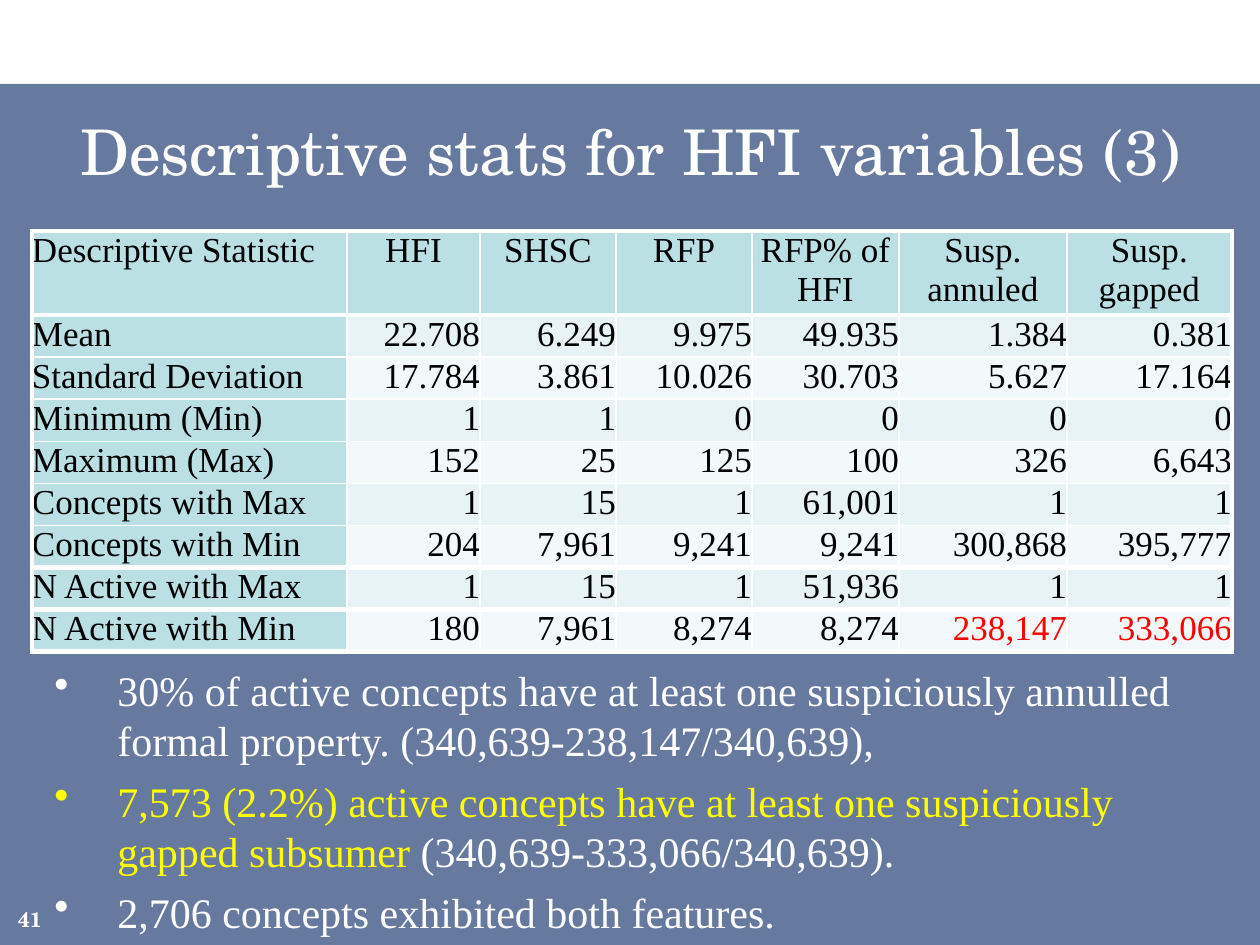
from lxml import etree
from pptx import Presentation
from pptx import util as u
from pptx.dml import color
from pptx.enum import shapes, text
from pptx.oxml import ns

PX = 914400 / 126
SERIF, HEADING = "Times New Roman", "TeX Gyre Schola"
COLORS = {
    "white": "FFFFFF", "black": "000000", "navy": "002060", "yellow": "FFFF00",
    "red": "FF0000", "header": "BBE0E3", "odd": "E7F3F4", "even": "F3F9FA",
}
COLUMN_WIDTHS = [315, 133, 136, 136, 147, 168, 165]
HEADER_HEIGHT, ROW_HEIGHT = 84, 42
THICK_RULES = {0, 1, 7, 8, 9}
STATISTICS = [
    ["Descriptive Statistic", "HFI", "SHSC", "RFP", "RFP% of\nHFI", "Susp. annuled", "Susp. gapped"],
    ["Mean", "22.708", "6.249", "9.975", "49.935", "1.384", "0.381"],
    ["Standard Deviation", "17.784", "3.861", "10.026", "30.703", "5.627", "17.164"],
    ["Minimum (Min)", "1", "1", "0", "0", "0", "0"],
    ["Maximum (Max)", "152", "25", "125", "100", "326", "6,643"],
    ["Concepts with Max", "1", "15", "1", "61,001", "1", "1"],
    ["Concepts with Min", "204", "7,961", "9,241", "9,241", "300,868", "395,777"],
    ["N Active with Max", "1", "15", "1", "51,936", "1", "1"],
    ["N Active with Min", "180", "7,961", "8,274", "8,274", "238,147", "333,066"],
]
HIGHLIGHTS = {"238,147", "333,066"}
FINDINGS = [
    [("30% of active concepts have at least one suspiciously annulled "
      "formal property. (340,639-238,147/340,639),", "white")],
    [("7,573 (2.2%) active concepts have at least one suspiciously gapped subsumer ", "yellow"),
     ("(340,639-333,066/340,639).", "white")],
    [("2,706 concepts exhibited both features.", "white")],
]


def px(length):
    """Turn pixels into EMU."""
    return u.Emu(round(length * PX))


def rgb(name):
    """Look up a named colour."""
    return color.RGBColor.from_string(COLORS[name])


def style(font, face, size, shade):
    """Set the face, size and colour of a font."""
    font.name, font.size = face, u.Pt(size)
    font.color.rgb = rgb(shade)


def place(shape, box):
    """Move and size a shape to a pixel box."""
    shape.left, shape.top, shape.width, shape.height = map(px, box)


def add_panel(page, box):
    """Put the translucent panel behind the title."""
    panel = page.shapes.add_shape(shapes.MSO_SHAPE.RECTANGLE, *map(px, box))
    panel.shadow.inherit = False
    panel.fill.solid()
    panel.fill.fore_color.rgb = rgb("navy")
    panel.line.fill.background()
    shade = panel.element.spPr.find(".//" + ns.qn("a:srgbClr"))
    etree.SubElement(shade, ns.qn("a:alpha"), val="60000")
    page.shapes.title.element.addprevious(panel.element)


def add_title(page, box):
    """Fill and place the title placeholder."""
    title = page.shapes.title
    place(title, box)
    frame = title.text_frame
    frame.text = "Descriptive stats for HFI variables (3)"
    frame.vertical_anchor = text.MSO_ANCHOR.MIDDLE
    para = frame.paragraphs[0]
    para.alignment = text.PP_ALIGN.CENTER
    style(para.runs[0].font, HEADING, 36, "white")


def set_borders(cell, widths):
    """Draw white cell borders, given point widths by side tag."""
    properties = cell._tc.get_or_add_tcPr()
    for position, (side, width) in enumerate(widths.items()):
        line = etree.Element(ns.qn(f"a:{side}"), w=str(u.Pt(width)))
        fill = etree.SubElement(line, ns.qn("a:solidFill"))
        etree.SubElement(fill, ns.qn("a:srgbClr"), val=COLORS["white"])
        properties.insert(position, line)


def fill_cell(cell, value, row, column):
    """Write one statistic and format its cell by position."""
    cell.margin_left = cell.margin_right = cell.margin_top = cell.margin_bottom = 0
    cell.fill.solid()
    is_header = row == 0 or column == 0
    cell.fill.fore_color.rgb = rgb("header" if is_header else "odd" if row % 2 else "even")
    cell.text_frame.text = value
    align = text.PP_ALIGN.LEFT if column == 0 else text.PP_ALIGN.RIGHT if row else text.PP_ALIGN.CENTER
    for para in cell.text_frame.paragraphs:
        para.alignment = align
        style(para.runs[0].font, SERIF, 20, "red" if value in HIGHLIGHTS else "black")
    set_borders(cell, {
        "lnL": 3 if column == 0 else 1,
        "lnR": 3 if column == len(COLUMN_WIDTHS) - 1 else 1,
        "lnT": 3 if row in THICK_RULES else 1,
        "lnB": 3 if row + 1 in THICK_RULES else 1,
    })


def add_statistics(page, left, top):
    """Add the table of statistics."""
    heights = [HEADER_HEIGHT] + [ROW_HEIGHT] * (len(STATISTICS) - 1)
    box = (left, top, sum(COLUMN_WIDTHS), sum(heights))
    table = page.shapes.add_table(len(heights), len(COLUMN_WIDTHS), *map(px, box)).table
    for column, width in zip(table.columns, COLUMN_WIDTHS):
        column.width = px(width)
    for row, height in zip(table.rows, heights):
        row.height = px(height)
    for row, values in enumerate(STATISTICS):
        for column, value in enumerate(values):
            fill_cell(table.cell(row, column), value, row, column)


def add_findings(page, box):
    """Add the bulleted findings."""
    frame = page.shapes.add_textbox(*map(px, box)).text_frame
    frame.word_wrap = True
    for index, spans in enumerate(FINDINGS):
        para = frame.add_paragraph() if index else frame.paragraphs[0]
        properties = para._p.get_or_add_pPr()
        properties.set("marL", str(px(63)))
        properties.set("indent", str(px(-63)))
        etree.SubElement(properties, ns.qn("a:buChar"), char="•")
        para.space_before = u.Pt(3 if index else 0)
        para.space_after = u.Pt(3)
        for words, shade in spans:
            span = para.add_run()
            span.text = words
            style(span.font, SERIF, 24, shade)


def add_page_number(page, box):
    """Add the page number at the lower left."""
    frame = page.shapes.add_textbox(*map(px, box)).text_frame
    frame.word_wrap = True
    frame.margin_left = frame.margin_right = frame.margin_top = frame.margin_bottom = 0
    frame.vertical_anchor = text.MSO_ANCHOR.BOTTOM
    frame.text = "41"
    para = frame.paragraphs[0]
    para.alignment = text.PP_ALIGN.RIGHT
    style(para.runs[0].font, HEADING, 12, "white")
    para.runs[0].font.bold = True


def main():
    """Build the slide and save the deck."""
    deck = Presentation()
    deck.slide_width, deck.slide_height = px(1260), px(945)
    page = deck.slides.add_slide(deck.slide_layouts[5])
    add_panel(page, (0, 84, 1260, 861))
    add_title(page, (32, 98, 1197, 105))
    add_page_number(page, (0, 892, 42, 40))
    add_findings(page, (42, 658, 1187, 288))
    add_statistics(page, 32, 231)
    deck.save("out.pptx")


if __name__ == "__main__":
    main()
